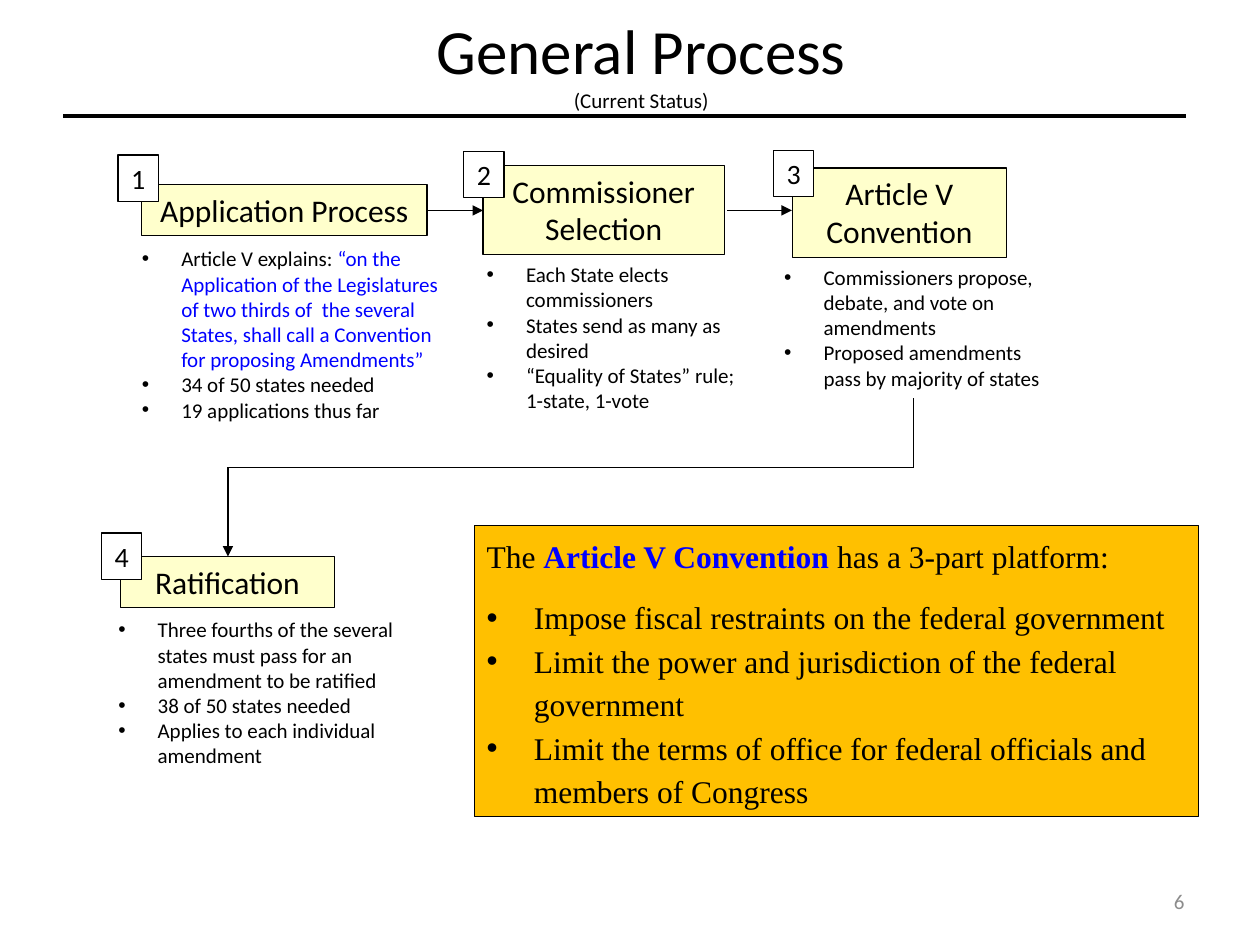
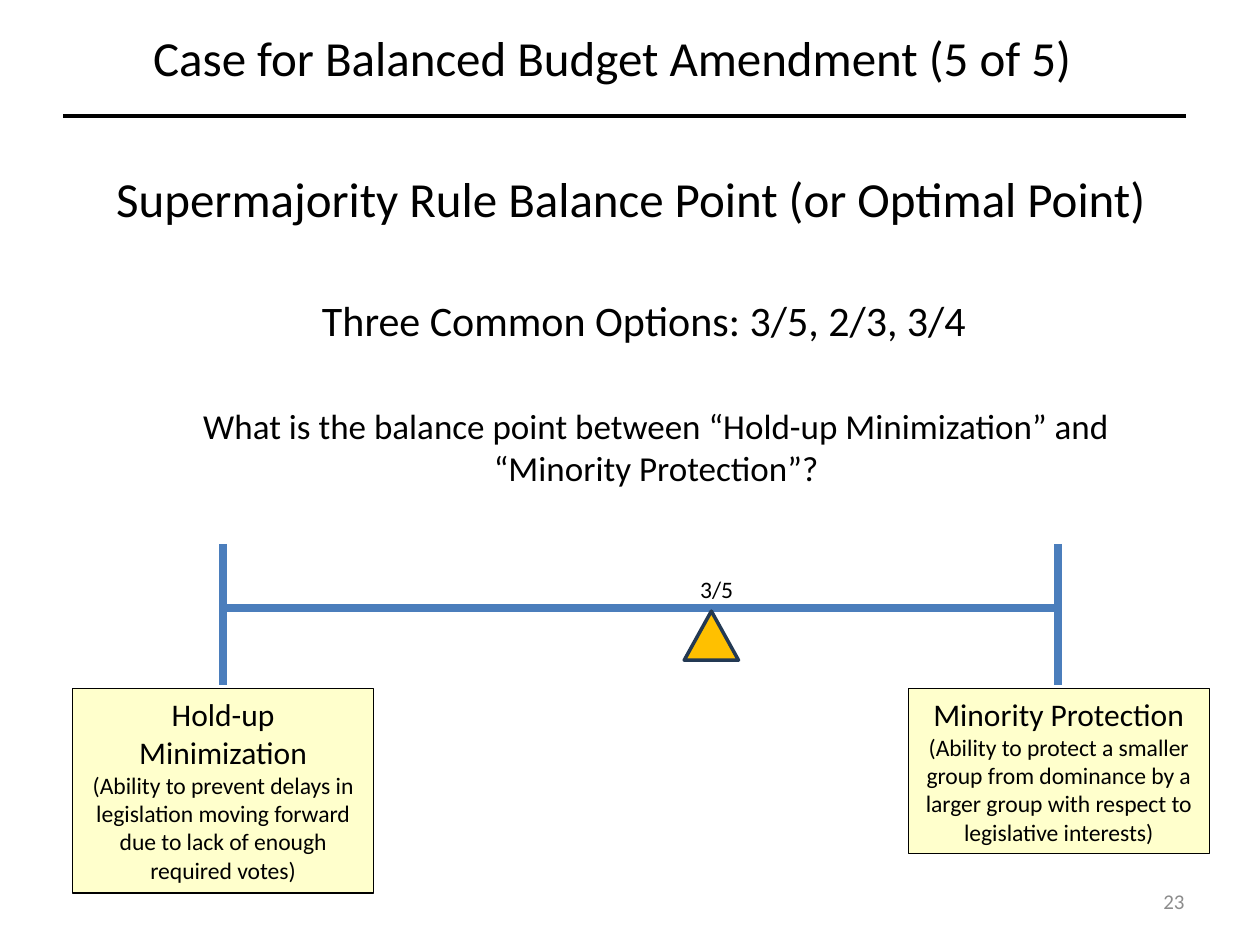
from lxml import etree
from pptx import Presentation
from pptx.dml.color import RGBColor
from pptx.enum import shapes, text
from pptx.oxml import ns
from pptx.util import Pt

BLACK = RGBColor(0x00, 0x00, 0x00)
WHITE = RGBColor(0xFF, 0xFF, 0xFF)
GREY = RGBColor(0x8C, 0x8C, 0x8C)
QUOTE_BLUE = RGBColor(0x00, 0x00, 0xFF)
BEAM_BLUE = RGBColor(0x4B, 0x7E, 0xBC)
NAVY = RGBColor(0x23, 0x39, 0x53)
CREAM = RGBColor(0xFF, 0xFF, 0xCC)
AMBER = RGBColor(0xFF, 0xC0, 0x00)
SANS, SERIF = "Calibri", "Times New Roman"
CENTER, RIGHT = text.PP_ALIGN.CENTER, text.PP_ALIGN.RIGHT

# Heading, heading box, badge corner, bullet box, bullets
STEPS = [
    ("Application Process", (81, 105.5, 163, 29), (67.5, 88.5), (74, 137, 194, 109),
     [[("Article V explains: ", BLACK),
       ("“on the Application of the Legislatures of two thirds of  the several States, "
        "shall call a Convention for proposing Amendments”", QUOTE_BLUE)],
      "34 of 50 states needed",
      "19 applications thus far"]),
    ("Commissioner\vSelection", (276, 94.5, 138, 51), (265, 86.5), (271, 146, 156, 94),
     ["Each State elects commissioners",
      "States send as many as desired",
      "“Equality of States” rule; 1-state, 1-vote"]),
    ("Article V Convention", (453, 96, 122, 51), (442, 86), (441, 147.5, 162, 80),
     ["Commissioners propose, debate, and vote on amendments",
      "Proposed amendments pass by majority of states"]),
    ("Ratification", (69, 318, 122, 29), (58, 304.5), (60.5, 349, 181, 94),
     ["Three fourths of the several states must pass for an amendment to be ratified",
      "38 of 50 states needed",
      "Applies to each individual amendment"]),
]
PLATFORM = [
    [("The ", BLACK), ("Article V Convention ", QUOTE_BLUE), ("has a 3-part platform:", BLACK)],
    "Impose fiscal restraints on the federal government",
    "Limit the power and jurisdiction of the federal government",
    "Limit the terms of office for federal officials and members of Congress",
]


def points(*lengths):
    return [Pt(length) for length in lengths]


def write(shape, lines, sizes, align=None, font=SANS, color=BLACK, wrap=True):
    """Fill a shape; a line is a string or a list of (words, colour), sizes go line by line."""
    frame = shape.text_frame
    frame.word_wrap = wrap
    frame.auto_size = text.MSO_AUTO_SIZE.NONE
    frame.vertical_anchor = text.MSO_ANCHOR.TOP
    for index, (line, size) in enumerate(zip(lines, sizes)):
        paragraph = frame.add_paragraph() if index else frame.paragraphs[0]
        paragraph.alignment = align
        pieces = [(line, color)] if isinstance(line, str) else line
        paragraph.text = pieces[0][0]
        for words, _ in pieces[1:]:
            paragraph.add_run().text = words
        if len(pieces) == 1:
            pieces = pieces * len(paragraph.runs)
        for run, (_, run_color) in zip(paragraph.runs, pieces):
            run.font.name, run.font.size = font, Pt(size)
            run.font.color.rgb = run_color
    return frame


def add_bullet(paragraph, indent):
    properties = paragraph._p.get_or_add_pPr()
    properties.set("marL", str(Pt(indent)))
    properties.set("indent", str(-Pt(indent)))
    etree.SubElement(properties, ns.qn("a:buFont")).set("typeface", "Arial")
    etree.SubElement(properties, ns.qn("a:buChar")).set("char", "•")


def add_label(slide, place, lines, sizes, **style):
    return write(slide.shapes.add_textbox(*points(*place)), lines, sizes, **style)


def add_figure(slide, place, fill, line=BLACK, width=0.75, kind=shapes.MSO_SHAPE.RECTANGLE):
    figure = slide.shapes.add_shape(kind, *points(*place))
    figure.shadow.inherit = False
    figure.fill.solid()
    figure.fill.fore_color.rgb = fill
    figure.line.color.rgb = line
    figure.line.width = Pt(width)
    return figure


def add_line(slide, start, end, color=BLACK, width=0.75, arrow=False):
    line = slide.shapes.add_connector(shapes.MSO_CONNECTOR.STRAIGHT, *points(*start, *end))
    line.line.color.rgb = color
    line.line.width = Pt(width)
    if arrow:
        etree.SubElement(line.line._get_or_add_ln(), ns.qn("a:tailEnd")).set("type", "triangle")
    etree.SubElement(line._element.spPr, ns.qn("a:effectLst"))


def add_titled_slide(deck, number, place, lines, sizes, wrap=True):
    """Start a slide with its title, the rule under it and the page number."""
    slide = deck.slides.add_slide(deck.slide_layouts[5])
    title = slide.shapes.title
    title.left, title.top, title.width, title.height = points(*place)
    write(title, lines, sizes, align=CENTER, wrap=wrap)
    add_line(slide, (36, 66.25), (678, 66.25), width=2.25)
    footer = add_label(slide, (516, 500.5, 168, 28.75), [number], [12], align=RIGHT, color=GREY)
    footer.vertical_anchor = text.MSO_ANCHOR.MIDDLE
    return slide


def add_step(slide, number, heading, box, badge, bullet_box, bullets):
    write(add_figure(slide, box, CREAM), [heading], [18], align=CENTER)
    frame = add_label(slide, bullet_box, bullets, [12] * len(bullets))
    for paragraph in frame.paragraphs:
        add_bullet(paragraph, 22.5)
    write(add_figure(slide, (*badge, 23, 26.5), WHITE), [str(number)], [16],
          align=CENTER, wrap=False)


def add_platform(slide):
    panel = add_figure(slide, (271, 300.25, 414, 166.5), AMBER)
    frame = write(panel, PLATFORM, [18] * len(PLATFORM), font=SERIF)
    intro, *goals = frame.paragraphs
    intro.runs[1].font.bold = True
    for paragraph in frame.paragraphs:
        paragraph.alignment = text.PP_ALIGN.LEFT
        paragraph.line_spacing = 1.15
    intro.space_after = goals[-1].space_after = Pt(10)
    for goal in goals:
        add_bullet(goal, 27)


def build_process(deck):
    slide = add_titled_slide(deck, "6", (241, 3, 251, 65.5),
                             ["General Process", "(Current Status)"], [36, 12], wrap=False)
    for number, step in enumerate(STEPS, 1):
        add_step(slide, number, *step)
    add_line(slide, (244, 120.25), (276, 120.25), arrow=True)
    add_line(slide, (415.5, 120.25), (452.5, 120.25), arrow=True)
    bend_left, bend_right = (130.25, 267), (522, 267)
    add_line(slide, (522, 227.5), bend_right)
    add_line(slide, bend_left, bend_right)
    add_line(slide, bend_left, (130.25, 318), arrow=True)
    add_platform(slide)


def build_balance(deck):
    slide = add_titled_slide(deck, "23", (24, 12, 651.5, 41),
                             ["Case for Balanced Budget Amendment (5 of 5)"], [28])
    add_label(slide, (56, 92.5, 609, 41),
              ["Supermajority Rule Balance Point (or Optimal Point)"], [28],
              align=CENTER, wrap=False)
    add_label(slide, (175, 164.5, 386, 36), ["Three Common Options: 3/5, 2/3, 3/4"], [24],
              align=CENTER, wrap=False)
    add_label(slide, (108, 227.5, 534, 55.5),
              ["What is the balance point between “Hold-up Minimization” and "
               "“Minority Protection”?"], [20], align=CENTER)

    left_end, right_end, beam = 127.5, 604.75, 347.25
    add_line(slide, (left_end, beam), (right_end, beam), BEAM_BLUE, 4.5)
    for end in (left_end, right_end):
        add_line(slide, (end, 310.75), (end, 391.25), BEAM_BLUE, 4.5)
    add_figure(slide, (391, 349.25, 31, 28), AMBER, NAVY, 2,
               shapes.MSO_SHAPE.ISOSCELES_TRIANGLE)
    add_label(slide, (393, 324.75, 34, 23.5), ["3/5"], [13.5], wrap=False)

    goals = [
        (41.5, 116.75, "Hold-up Minimization",
         "(Ability to prevent delays in legislation moving forward due to lack of "
         "enough required votes)"),
        (519, 94.25, "Minority Protection",
         "(Ability to protect a smaller group from dominance by a larger group with "
         "respect to legislative interests)"),
    ]
    for left, height, goal, meaning in goals:
        box = add_figure(slide, (left, 393.5, 172, height), CREAM)
        write(box, [goal, meaning], [18, 13.5], align=CENTER)


def main():
    deck = Presentation()
    deck.slide_width, deck.slide_height = points(720, 540)
    build_process(deck)
    build_balance(deck)
    deck.save("out.pptx")


if __name__ == "__main__":
    main()
